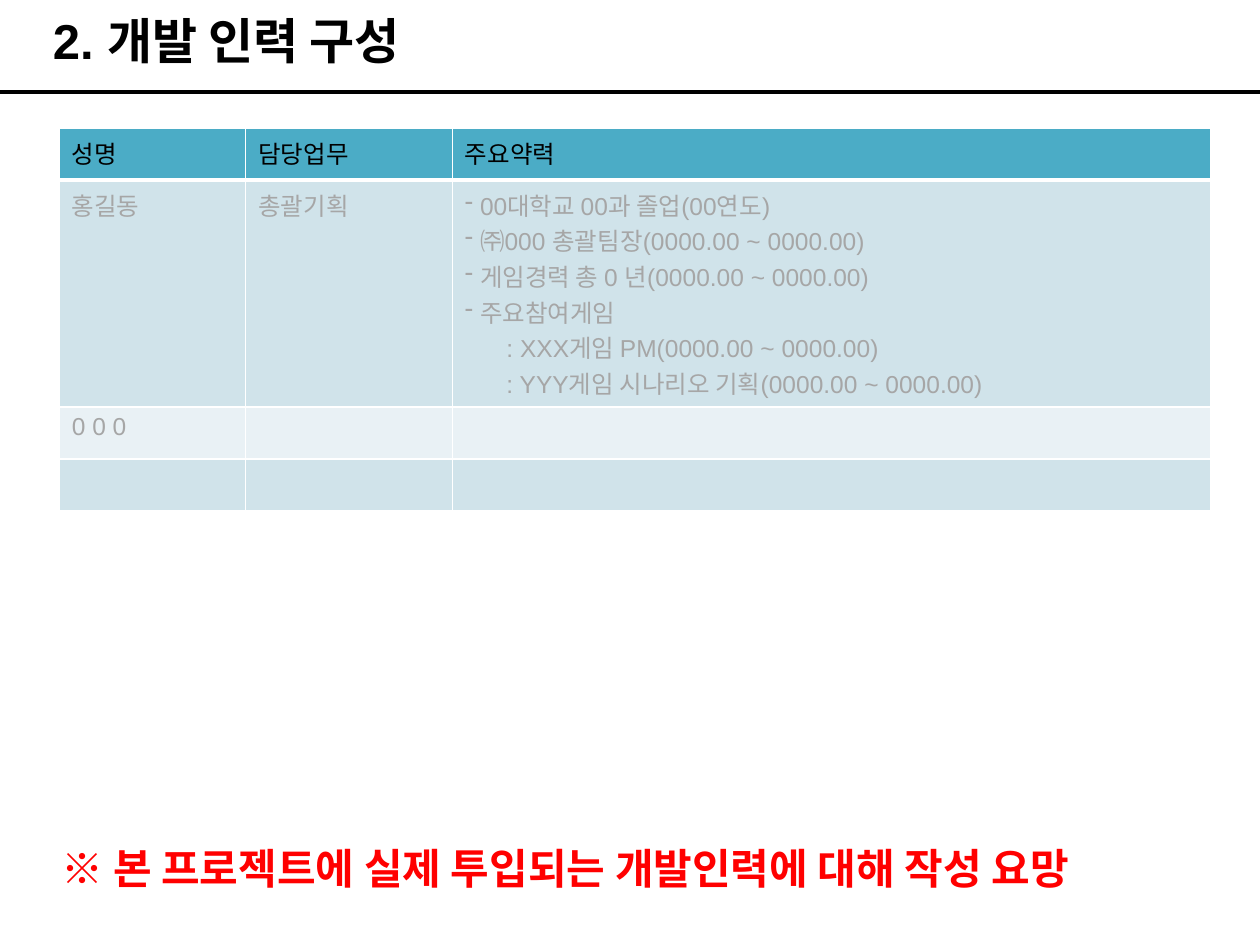
from dataclasses import dataclass

from lxml import etree
from pptx import Presentation
from pptx.dml.color import RGBColor
from pptx.enum.shapes import MSO_CONNECTOR
from pptx.enum.text import MSO_ANCHOR, MSO_AUTO_SIZE, PP_ALIGN
from pptx.oxml.ns import qn
from pptx.util import Inches, Pt

STRAIGHT = MSO_CONNECTOR.STRAIGHT
MIDDLE, TOP = MSO_ANCHOR.MIDDLE, MSO_ANCHOR.TOP
LEFT = PP_ALIGN.LEFT
NO_FIT, GROW = MSO_AUTO_SIZE.NONE, MSO_AUTO_SIZE.SHAPE_TO_FIT_TEXT

FONT = "Arial"
COLORS = {
    "black": "000000",
    "white": "FFFFFF",
    "red": "FF0000",
    "sample": "A6A6A6",
    "header": "4BACC6",
    "band_dark": "D0E3EA",
    "band_light": "E9F1F5",
}


@dataclass(frozen=True)
class Line:
    text: str
    bullet: str = ""
    indent: float = 0
    hanging: float = 0


@dataclass(frozen=True)
class Row:
    height: float
    fill: str
    text_color: str
    cells: tuple[tuple[Line, ...], ...]
    bottom_border: float = 1


def career(text: str) -> Line:
    return Line(text, bullet="-", indent=0.12, hanging=0.12)


def game(text: str) -> Line:
    return Line(text, indent=0.33)


COLUMN_WIDTHS = (1.48, 1.64, 6.02)
ROWS = (
    Row(0.41, "header", "black",
        ((Line("성명"),), (Line("담당업무"),), (Line("주요약력"),)), bottom_border=3),
    Row(1.47, "band_dark", "sample", (
        (Line("홍길동"),),
        (Line("총괄기획"),),
        (
            career("00대학교 00과 졸업(00연도)"),
            career("㈜000 총괄팀장(0000.00 ~ 0000.00)"),
            career("게임경력 총 0 년(0000.00 ~ 0000.00)"),
            career("주요참여게임"),
            game(": XXX게임 PM(0000.00 ~ 0000.00)"),
            game(": YYY게임 시나리오 기획(0000.00 ~ 0000.00)"),
        ),
    )),
    Row(0.41, "band_light", "sample", ((Line("0 0 0"),), (Line(""),), (Line(""),))),
    Row(0.41, "band_dark", "sample", ((Line(""),),) * 3),
)


def rgb(name: str) -> RGBColor:
    return RGBColor.from_string(COLORS[name])


def write_text(text_frame, lines: tuple[Line, ...], *, size: float,
               color: str, bold: bool = False) -> None:
    for index, line in enumerate(lines):
        paragraph = text_frame.paragraphs[0] if index == 0 else text_frame.add_paragraph()
        properties = paragraph._p.get_or_add_pPr()
        properties.set("marL", str(Inches(line.indent)))
        properties.set("indent", str(-Inches(line.hanging)))
        if line.bullet:
            etree.SubElement(properties, qn("a:buChar"), char=line.bullet)
        paragraph.alignment = LEFT
        paragraph.text = line.text
        font = paragraph.font
        if paragraph.runs:
            font = paragraph.runs[0].font
        font.name, font.size, font.bold = FONT, Pt(size), bold
        font.color.rgb = rgb(color)


def set_borders(cell, bottom_width: float) -> None:
    properties = cell._tc.get_or_add_tcPr()
    widths = {"lnL": 1, "lnR": 1, "lnT": 1, "lnB": bottom_width}
    for position, (side, width) in enumerate(widths.items()):
        border = etree.Element(qn(f"a:{side}"), w=str(Pt(width)))
        fill = etree.SubElement(border, qn("a:solidFill"))
        etree.SubElement(fill, qn("a:srgbClr"), val=COLORS["white"])
        properties.insert(position, border)


def add_staff_table(slide) -> None:
    frame = slide.shapes.add_table(
        len(ROWS), len(COLUMN_WIDTHS), Inches(0.47), Inches(1.02),
        Inches(sum(COLUMN_WIDTHS)), Inches(sum(row.height for row in ROWS)))
    table = frame.table
    table.horz_banding = False
    for column, width in zip(table.columns, COLUMN_WIDTHS):
        column.width = Inches(width)
    for row_index, row in enumerate(ROWS):
        table.rows[row_index].height = Inches(row.height)
        for column_index, lines in enumerate(row.cells):
            cell = table.cell(row_index, column_index)
            cell.fill.solid()
            cell.fill.fore_color.rgb = rgb(row.fill)
            set_borders(cell, row.bottom_border)
            write_text(cell.text_frame, lines, size=14, color=row.text_color)


def add_rule(slide) -> None:
    rule = slide.shapes.add_connector(
        STRAIGHT, Inches(0), Inches(0.73), Inches(10), Inches(0.73))
    rule.line.color.rgb = rgb("black")
    rule.line.width = Pt(2.25)
    etree.SubElement(rule._element.spPr, qn("a:effectLst"))


def place_text(shape, box: tuple[float, ...], line: Line, *, size: float, color: str,
               left_margin: float, anchor, fit) -> None:
    shape.left, shape.top, shape.width, shape.height = map(Inches, box)
    text_frame = shape.text_frame
    text_frame.word_wrap = True
    text_frame.auto_size = fit
    text_frame.vertical_anchor = anchor
    text_frame.margin_left = Inches(left_margin)
    text_frame.margin_top = text_frame.margin_bottom = 0
    write_text(text_frame, (line,), size=size, color=color, bold=True)


def main() -> None:
    presentation = Presentation()
    presentation.slide_width, presentation.slide_height = Inches(10), Inches(7.5)
    slide = presentation.slides.add_slide(presentation.slide_layouts[5])

    # Heading and the rule under it
    add_rule(slide)
    place_text(slide.shapes.title, (0, 0.08, 9, 0.4), Line("2. 개발 인력 구성"),
               size=28, color="black", left_margin=0.42, anchor=TOP, fit=NO_FIT)

    # Staff table
    add_staff_table(slide)

    # Note at the foot
    note = slide.shapes.add_textbox(0, 0, 0, 0)
    place_text(note, (0.39, 6.64, 9.3, 0.5),
               Line("※ 본 프로젝트에 실제 투입되는 개발인력에 대해 작성 요망",
                    indent=0.44, hanging=0.44),
               size=24, color="red", left_margin=0.1, anchor=MIDDLE, fit=GROW)

    presentation.save("out.pptx")


if __name__ == "__main__":
    main()
